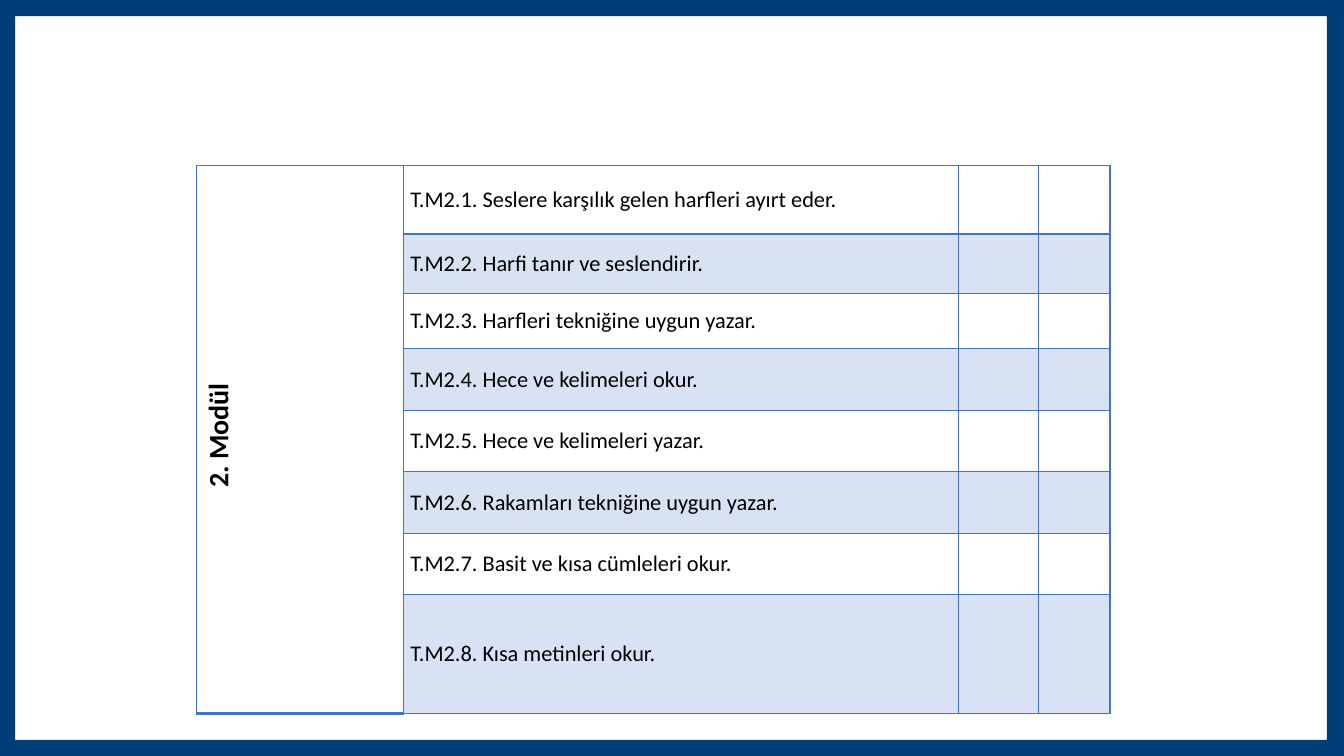
from lxml import etree
from pptx import Presentation, util as u
from pptx.dml.color import RGBColor
from pptx.enum import text
from pptx.oxml import ns

COLORS = {"frame": "003E7A", "accent": "4472C4", "ink": "000000"}
SLIDE_W, SLIDE_H = 13.33, 7.5
UNITS_PER_INCH = 100
COLUMNS = [2.05, 5.51, 0.79, 0.71]
ROWS = [0.68, 0.59, 0.55] + [0.61] * 4 + [1.18]
MODULE = "2. Modül"
OUTCOMES = [
    "Seslere karşılık gelen harfleri ayırt eder.",
    "Harfi tanır ve seslendirir.",
    "Harfleri tekniğine uygun yazar.",
    "Hece ve kelimeleri okur.",
    "Hece ve kelimeleri yazar.",
    "Rakamları tekniğine uygun yazar.",
    "Basit ve kısa cümleleri okur.",
    "Kısa metinleri okur.",
]


def rgb(name):
    """Return a named palette colour."""
    return RGBColor.from_string(COLORS[name])


def write(cell, words, size=16, bold=False, align=text.PP_ALIGN.LEFT, spacing=1.0):
    """Write formatted, vertically centred text into a table cell."""
    cell.margin_left = cell.margin_right = u.Inches(0.07)
    cell.margin_top = cell.margin_bottom = 0
    cell.vertical_anchor = text.MSO_ANCHOR.MIDDLE
    paragraph = cell.text_frame.paragraphs[0]
    paragraph.alignment = align
    paragraph.line_spacing = spacing
    run = paragraph.add_run()
    run.text = words
    run.font.name = "Calibri"
    run.font.size = u.Pt(size)
    run.font.bold = bold
    run.font.color.rgb = rgb("ink")
    return paragraph


def add_borders(cell, bottom=1):
    """Rule all four sides of a cell, with a chosen bottom width."""
    properties = cell._tc.get_or_add_tcPr()
    for side, width in (("L", 1), ("R", 1), ("T", 1), ("B", bottom)):
        line = etree.SubElement(properties, ns.qn(f"a:ln{side}"), w=str(u.Pt(width)))
        fill = etree.SubElement(line, ns.qn("a:solidFill"))
        etree.SubElement(fill, ns.qn("a:srgbClr"), val=COLORS["accent"])


def shade(cell, banded):
    """Give a cell the pale band tint, or no fill."""
    if not banded:
        cell.fill.background()
        return
    cell.fill.solid()
    cell.fill.fore_color.rgb = rgb("accent")
    tint = cell._tc.tcPr.find(f"{ns.qn('a:solidFill')}/{ns.qn('a:srgbClr')}")
    etree.SubElement(tint, ns.qn("a:alpha"), val="20000")


def add_outcomes(slide):
    """Add the module's table of learning outcomes."""
    frame = slide.shapes.add_table(
        len(ROWS), len(COLUMNS), u.Inches(1.95), u.Inches(1.64),
        u.Inches(sum(COLUMNS)), u.Inches(sum(ROWS)))
    table = frame.table
    table.first_row = table.horz_banding = False
    for column, width in zip(table.columns, COLUMNS):
        column.width = u.Inches(width)
    for row, height in zip(table.rows, ROWS):
        row.height = u.Inches(height)

    module = table.cell(0, 0)
    module.merge(table.cell(len(ROWS) - 1, 0))
    heading = write(module, MODULE, size=20, bold=True,
                    align=text.PP_ALIGN.CENTER, spacing=1.15)
    heading._p.get_or_add_pPr().set("marL", str(u.Inches(0.08)))
    module._tc.get_or_add_tcPr().set("vert", "vert270")
    add_borders(module, bottom=2)
    shade(module, False)

    for index, outcome in enumerate(OUTCOMES):
        write(table.cell(index, 1), f"T.M2.{index + 1}. {outcome}")
        for column in range(1, len(COLUMNS)):
            cell = table.cell(index, column)
            add_borders(cell, bottom=2 if index == 0 else 1)
            shade(cell, index % 2 == 1)


def to_units(points):
    """Convert points in inches to whole drawing units."""
    return [(round(x * UNITS_PER_INCH), round(y * UNITS_PER_INCH)) for x, y in points]


def add_frame(slide):
    """Add the border around the slide as an outline with an opening."""
    left, top, right, bottom = 0.15, 0.16, 13.16, 7.34
    outer = to_units([(0, 0), (SLIDE_W, 0), (SLIDE_W, SLIDE_H), (0, SLIDE_H)])
    opening = to_units([(left, top), (left, bottom), (right, bottom), (right, top)])
    builder = slide.shapes.build_freeform(*outer[0], scale=u.Inches(1) / UNITS_PER_INCH)
    builder.add_line_segments(outer[1:])
    builder.move_to(*opening[0])
    builder.add_line_segments(opening[1:])
    border = builder.convert_to_shape()
    border.shadow.inherit = False
    border.fill.solid()
    border.fill.fore_color.rgb = rgb("frame")
    border.line.fill.background()


def main():
    """Build and save the slide."""
    deck = Presentation()
    deck.slide_width, deck.slide_height = u.Inches(SLIDE_W), u.Inches(SLIDE_H)
    slide = deck.slides.add_slide(deck.slide_layouts[6])
    add_outcomes(slide)
    add_frame(slide)
    deck.save("out.pptx")


if __name__ == "__main__":
    main()
